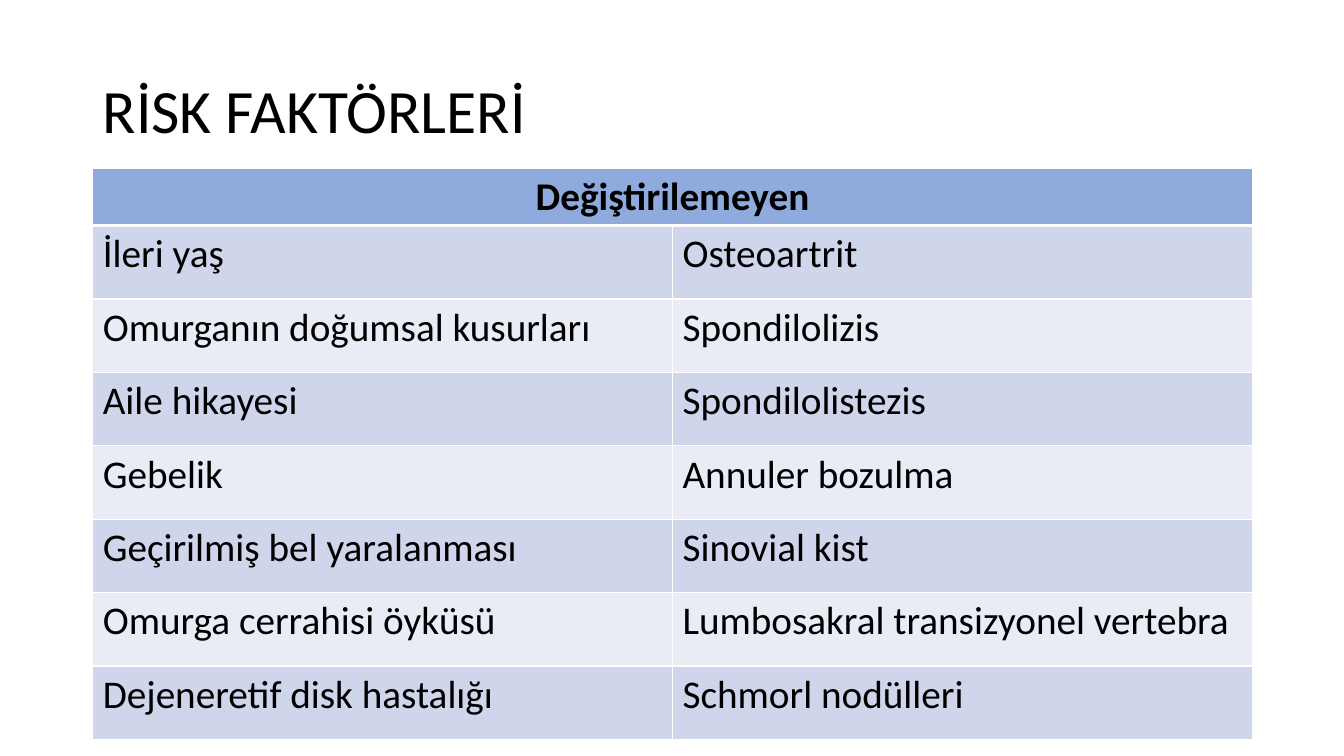
import pptx
import pptx.dml.color
import pptx.enum.text
import pptx.oxml.ns
import pptx.util
from dataclasses import dataclass
from lxml import etree

PX = 9144  # EMU in one px, 100 px to the inch


@dataclass(frozen=True)
class Theme:
    font: str = "Calibri"
    ink: str = "000000"
    line: str = "FFFFFF"
    head: str = "8FAADC"
    bands: tuple = ("CFD5EA", "E9EBF5")
    title_size: int = 44
    cell_size: int = 28


THEME = Theme()
ALIGN = pptx.enum.text.PP_ALIGN
ANCHOR = pptx.enum.text.MSO_ANCHOR

TITLE = "RİSK FAKTÖRLERİ"
HEAD = "Değiştirilemeyen"
RISKS = [
    ("İleri yaş", "Osteoartrit"),
    ("Omurganın doğumsal kusurları", "Spondilolizis"),
    ("Aile hikayesi", "Spondilolistezis"),
    ("Gebelik", "Annuler bozulma"),
    ("Geçirilmiş bel yaralanması", "Sinovial kist"),
    ("Omurga cerrahisi öyküsü", "Lumbosakral transizyonel vertebra"),
    ("Dejeneretif disk hastalığı", "Schmorl nodülleri"),
]


def rgb(code):
    return pptx.dml.color.RGBColor.from_string(code)


def put_text(frame, text, size=THEME.cell_size, bold=False, align=ALIGN.LEFT, space=1.0):
    para = frame.paragraphs[0]
    para.alignment = align
    para.line_spacing = space
    run = para.add_run()
    run.text = text
    run.font.name = THEME.font
    run.font.size = pptx.util.Pt(size)
    run.font.bold = bold
    run.font.color.rgb = rgb(THEME.ink)


def style_cell(cell, fill, top=1, base=1):
    """Draw the cell's borders, with top and base widths in points, then fill it."""
    props = cell._tc.get_or_add_tcPr()
    for side, width in (("L", 1), ("R", 1), ("T", top), ("B", base)):
        line = etree.SubElement(props, pptx.oxml.ns.qn("a:ln" + side),
                                w=str(pptx.util.Pt(width)))
        solid = etree.SubElement(line, pptx.oxml.ns.qn("a:solidFill"))
        etree.SubElement(solid, pptx.oxml.ns.qn("a:srgbClr"), val=THEME.line)
    cell.fill.solid()
    cell.fill.fore_color.rgb = rgb(fill)


def add_title(slide, box):
    frame = slide.shapes.add_textbox(*(n * PX for n in box)).text_frame
    frame.word_wrap = True
    frame.vertical_anchor = ANCHOR.MIDDLE
    put_text(frame, TITLE, size=THEME.title_size, space=0.9)


def add_risks(slide, box, head_high=56):
    """Place the table: a merged head row, then equal banded rows."""
    high = box[3]
    count = len(RISKS)
    table = slide.shapes.add_table(count + 1, 2, *(n * PX for n in box)).table
    for row in table.rows:
        row.height = (high - head_high) * PX // count
    table.rows[0].height = head_high * PX

    for col in range(2):
        style_cell(table.cell(0, col), THEME.head, base=3)
    table.cell(0, 0).merge(table.cell(0, 1))
    put_text(table.cell(0, 0).text_frame, HEAD, bold=True, align=ALIGN.CENTER)

    for row, pair in enumerate(RISKS, 1):
        for col, text in enumerate(pair):
            cell = table.cell(row, col)
            style_cell(cell, THEME.bands[(row - 1) % 2], top=3 if row == 1 else 1)
            put_text(cell.text_frame, text)


def main():
    deck = pptx.Presentation()
    deck.slide_width = 1333 * PX
    deck.slide_height = 750 * PX
    slide = deck.slides.add_slide(deck.slide_layouts[6])
    add_title(slide, (92, 40, 1150, 145))
    add_risks(slide, (92, 167, 1150, 566))
    deck.save("out.pptx")


if __name__ == "__main__":
    main()
